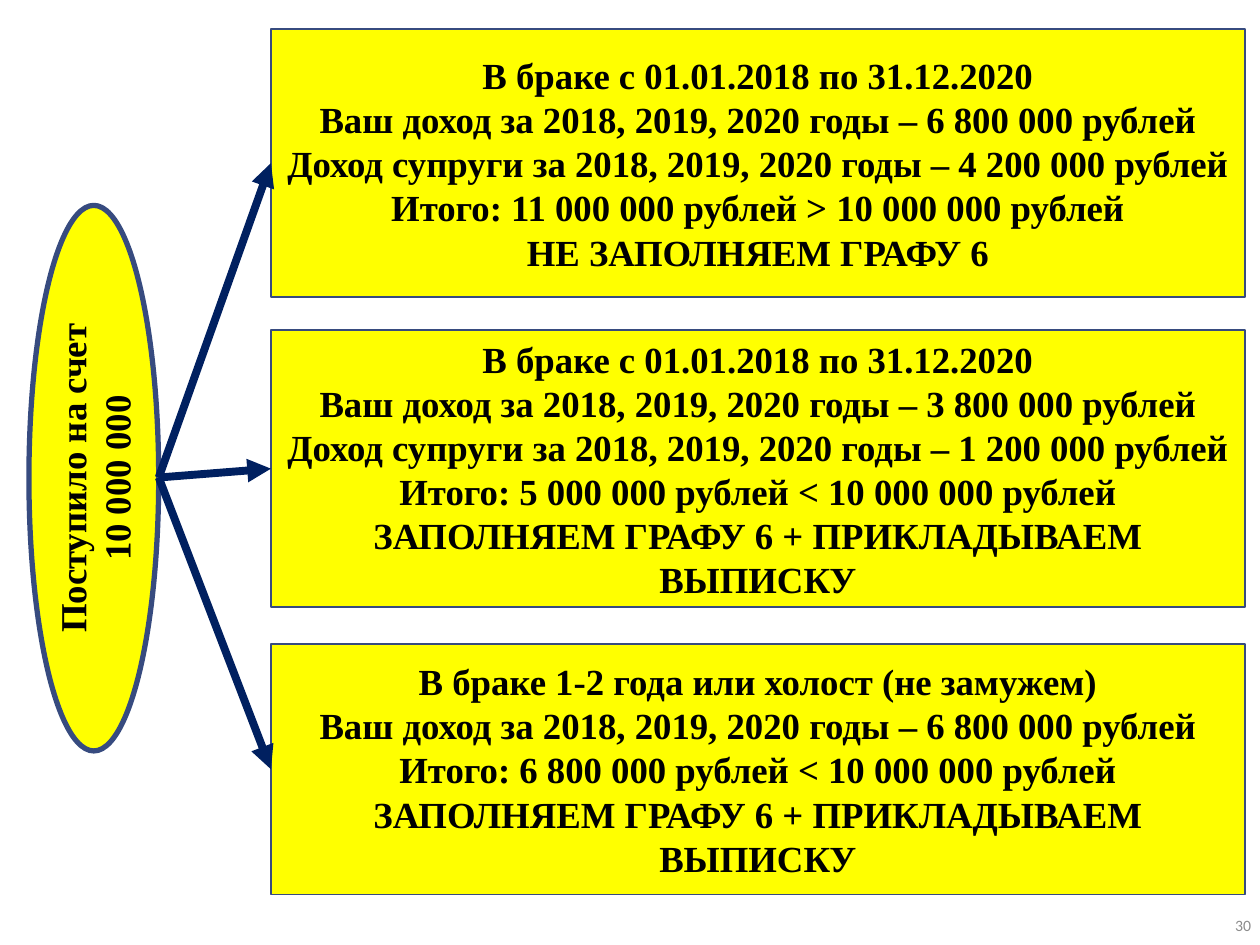
from dataclasses import dataclass

import pptx
import pptx.dml.color
import pptx.enum.shapes
import pptx.enum.text
import pptx.oxml
import pptx.oxml.ns
import pptx.util

SCALE = 9144  # EMU per px, 100 px to the inch
YELLOW, BLUE, NAVY, BLACK, GREY = "FFFF00", "374B7F", "002060", "000000", "8C8C8C"
ALIGN = pptx.enum.text.PP_ALIGN
SHAPE = pptx.enum.shapes.MSO_SHAPE


@dataclass
class Case:
    top: int
    height: int
    lines: list[str]


MARRIED = "В браке с 01.01.2018 по 31.12.2020"
FILL_IN = "ЗАПОЛНЯЕМ ГРАФУ 6 + ПРИКЛАДЫВАЕМ ВЫПИСКУ"
OWN_INCOME = "Ваш доход за 2018, 2019, 2020 годы – {} рублей"
SPOUSE_INCOME = "Доход супруги за 2018, 2019, 2020 годы – {} рублей"
TOTAL = "Итого: {} рублей {} 10 000 000 рублей"

CASES = [
    Case(23, 213, [MARRIED, OWN_INCOME.format("6 800 000"),
                   SPOUSE_INCOME.format("4 200 000"),
                   TOTAL.format("11 000 000", ">"), "НЕ ЗАПОЛНЯЕМ ГРАФУ 6"]),
    Case(262, 220, [MARRIED, OWN_INCOME.format("3 800 000"),
                    SPOUSE_INCOME.format("1 200 000"),
                    TOTAL.format("5 000 000", "<"), FILL_IN]),
    Case(511, 199, ["В браке 1-2 года или холост (не замужем)",
                    OWN_INCOME.format("6 800 000"),
                    TOTAL.format("6 800 000", "<"), FILL_IN]),
]
CASE_LEFT, CASE_WIDTH = 215, 773
ARROW_START = (126, 379)


def px(length: int) -> pptx.util.Emu:
    return pptx.util.Emu(length * SCALE)


def color(value: str) -> pptx.dml.color.RGBColor:
    return pptx.dml.color.RGBColor.from_string(value)


def write(frame, lines: list[str], size: int, font: str, ink: str, bold: bool, align) -> None:
    frame.word_wrap = True
    frame.vertical_anchor = pptx.enum.text.MSO_ANCHOR.MIDDLE
    frame.text = "\n".join(lines)
    for paragraph in frame.paragraphs:
        paragraph.alignment = align
        for run in paragraph.runs:
            run.font.size = pptx.util.Pt(size)
            run.font.name = font
            run.font.bold = bold
            run.font.color.rgb = color(ink)


def add_block(slide, kind, left: int, top: int, width: int, height: int,
              line_width: int, lines: list[str]):
    block = slide.shapes.add_shape(kind, px(left), px(top), px(width), px(height))
    block.shadow.inherit = False
    block.fill.solid()
    block.fill.fore_color.rgb = color(YELLOW)
    block.line.color.rgb = color(BLUE)
    block.line.width = pptx.util.Pt(line_width)
    write(block.text_frame, lines, 21, "Times New Roman", BLACK, True, ALIGN.CENTER)
    return block


def add_arrow(slide, target) -> None:
    x, y = map(px, ARROW_START)
    arrow = slide.shapes.add_connector(
        pptx.enum.shapes.MSO_CONNECTOR.STRAIGHT, x, y, x, y)
    arrow.end_connect(target, 1)  # middle of the left side
    arrow.line.color.rgb = color(NAVY)
    arrow.line.width = pptx.util.Pt(4.5)
    namespace = pptx.oxml.ns.nsdecls("a")
    arrow.line._get_or_add_ln().append(
        pptx.oxml.parse_xml(f'<a:tailEnd {namespace} type="triangle"/>'))
    arrow._element.spPr.append(pptx.oxml.parse_xml(f"<a:effectLst {namespace}/>"))


def main() -> None:
    deck = pptx.Presentation()
    deck.slide_width, deck.slide_height = px(1000), px(750)
    slide = deck.slides.add_slide(deck.slide_layouts[6])

    # Slide number
    number = slide.shapes.add_textbox(px(955), px(714), px(45), px(40)).text_frame
    number.margin_left = number.margin_right = px(7)
    number.margin_top = number.margin_bottom = px(4)
    write(number, ["30"], 9, "Calibri", GREY, False, ALIGN.RIGHT)

    # Money received, turned to read upwards
    received = add_block(slide, SHAPE.OVAL, -142, 328, 433, 103, 3,
                         ["Поступило на счет", "10 000 000"])
    received.rotation = 270

    # Cases, then the arrows leading to them
    boxes = [add_block(slide, SHAPE.RECTANGLE, CASE_LEFT, case.top, CASE_WIDTH,
                       case.height, 1, case.lines) for case in CASES]
    for box in boxes:
        add_arrow(slide, box)

    deck.save("out.pptx")


if __name__ == "__main__":
    main()
